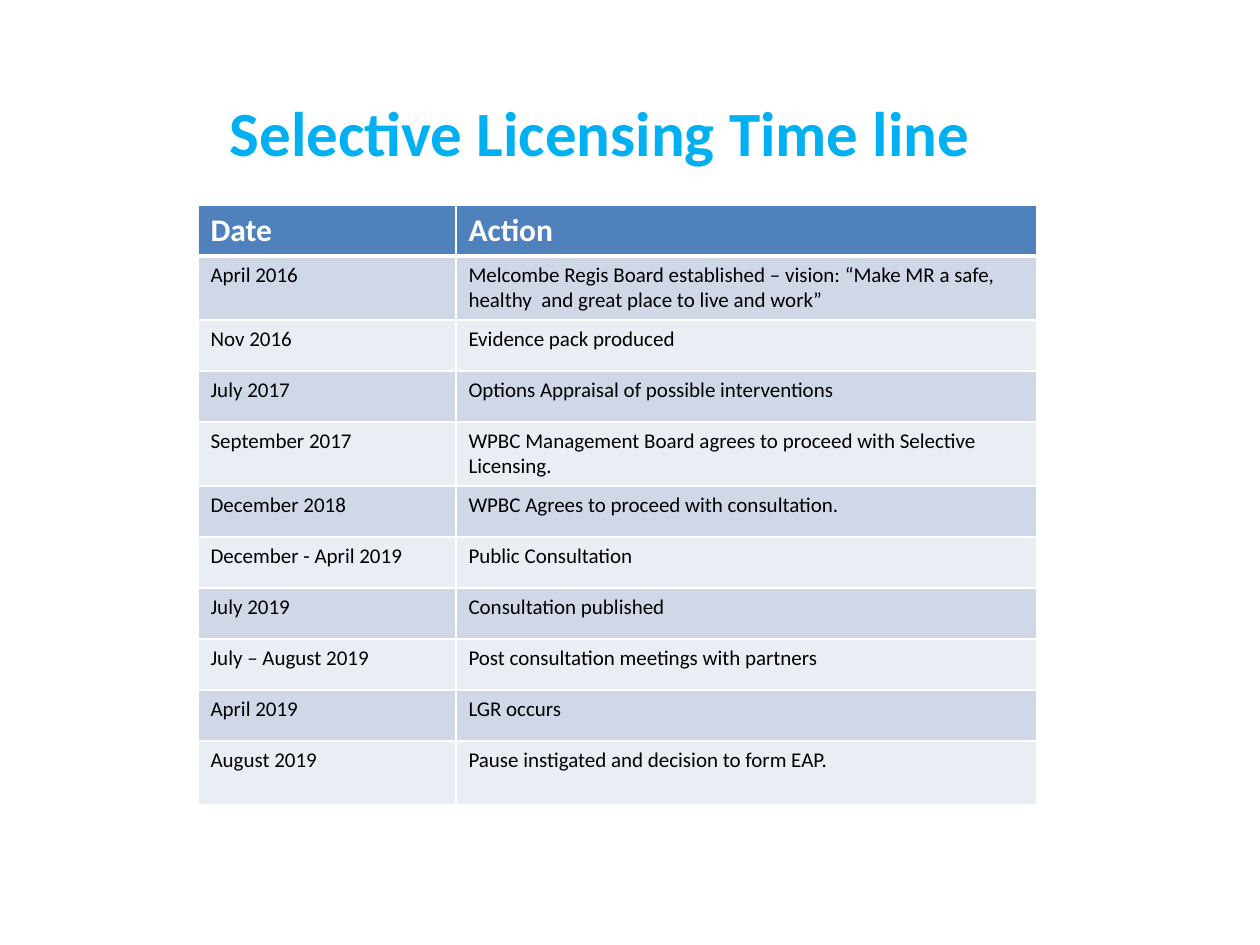
from dataclasses import dataclass

from lxml import etree
from pptx import Presentation
from pptx.dml.color import RGBColor
from pptx.enum.text import MSO_ANCHOR, PP_ALIGN
from pptx.oxml.ns import qn
from pptx.util import Emu, Pt

CENTER = PP_ALIGN.CENTER
MIDDLE = MSO_ANCHOR.MIDDLE
EMU_PER_PX = 914400 / 126
FONT = "Calibri"
COLORS = {
    "title": "00B0F0",
    "header": "4F81BD",
    "odd": "D0D8E8",
    "even": "E9EDF4",
    "white": "FFFFFF",
    "black": "000000",
}
ROW_HEIGHT = 51
TALL_ROW_HEIGHT = 64
COLUMN_WIDTHS = (258, 581)
TABLE_LEFT, TABLE_TOP = 198, 205


@dataclass(frozen=True)
class Milestone:
    date: str
    action: str
    height: int = ROW_HEIGHT


@dataclass(frozen=True)
class RowStyle:
    fill: str
    text: str
    size: int
    bold: bool
    bottom_line: int


HEADING = Milestone("Date", "Action")
MILESTONES = (
    Milestone("April 2016", "Melcombe Regis Board established – vision: “Make MR a safe, healthy  and great place to live and work”", TALL_ROW_HEIGHT),
    Milestone("Nov 2016", "Evidence pack produced"),
    Milestone("July 2017", "Options Appraisal of possible interventions"),
    Milestone("September 2017", "WPBC Management Board agrees to proceed with Selective Licensing.", TALL_ROW_HEIGHT),
    Milestone("December 2018", "WPBC Agrees to proceed with consultation."),
    Milestone("December - April 2019", "Public Consultation"),
    Milestone("July 2019", "Consultation published"),
    Milestone("July – August 2019", "Post consultation meetings with partners"),
    Milestone("April 2019", "LGR occurs"),
    Milestone("August 2019", "Pause instigated and decision to form EAP.", TALL_ROW_HEIGHT),
)
HEADER_STYLE = RowStyle("header", "white", 18, True, 3)
BODY_STYLES = (
    RowStyle("odd", "black", 12, False, 1),
    RowStyle("even", "black", 12, False, 1),
)


def px(length: int) -> Emu:
    return Emu(round(length * EMU_PER_PX))


def rgb(color: str) -> RGBColor:
    return RGBColor.from_string(COLORS[color])


def add_text(paragraph, text: str, size: int, color: str, bold: bool) -> None:
    run = paragraph.add_run()
    run.text = text
    run.font.name = FONT
    run.font.size = Pt(size)
    run.font.bold = bold
    run.font.color.rgb = rgb(color)


def add_borders(cell, top: int, bottom: int) -> None:
    properties = cell._tc.get_or_add_tcPr()
    widths = {"lnL": 1, "lnR": 1, "lnT": top, "lnB": bottom}
    for position, (side, width) in enumerate(widths.items()):
        line = etree.Element(qn(f"a:{side}"), w=str(Pt(width)))
        fill = etree.SubElement(line, qn("a:solidFill"))
        etree.SubElement(fill, qn("a:srgbClr"), val=COLORS["white"])
        properties.insert(position, line)


def add_title(slide, text: str) -> None:
    title = slide.shapes.title
    title.left, title.top, title.width, title.height = map(px, (28, 83, 1144, 96))
    title.text_frame.vertical_anchor = MIDDLE
    heading = title.text_frame.paragraphs[0]
    heading.alignment = CENTER
    add_text(heading, text, 36, "title", True)


def fill_row(table, index: int, milestone: Milestone, style: RowStyle, top_line: int) -> None:
    table.rows[index].height = px(milestone.height)
    for cell, text in zip(table.rows[index].cells, (milestone.date, milestone.action)):
        cell.fill.solid()
        cell.fill.fore_color.rgb = rgb(style.fill)
        add_borders(cell, top_line, style.bottom_line)
        add_text(cell.text_frame.paragraphs[0], text, style.size, style.text, style.bold)


def add_timeline(slide) -> None:
    entries = (HEADING, *MILESTONES)
    height = sum(entry.height for entry in entries)
    table = slide.shapes.add_table(
        len(entries), len(COLUMN_WIDTHS),
        px(TABLE_LEFT), px(TABLE_TOP), px(sum(COLUMN_WIDTHS)), px(height),
    ).table
    for column, width in zip(table.columns, COLUMN_WIDTHS):
        column.width = px(width)
    top_line = 1
    for index, entry in enumerate(entries):
        style = BODY_STYLES[(index - 1) % 2] if index else HEADER_STYLE
        fill_row(table, index, entry, style, top_line)
        top_line = style.bottom_line


def main() -> None:
    presentation = Presentation()
    presentation.slide_width = px(1260)
    presentation.slide_height = px(945)
    slide = presentation.slides.add_slide(presentation.slide_layouts[0])
    subtitle = slide.placeholders[1].element
    subtitle.getparent().remove(subtitle)
    add_title(slide, "Selective Licensing Time line")
    add_timeline(slide)
    presentation.save("out.pptx")


if __name__ == "__main__":
    main()
